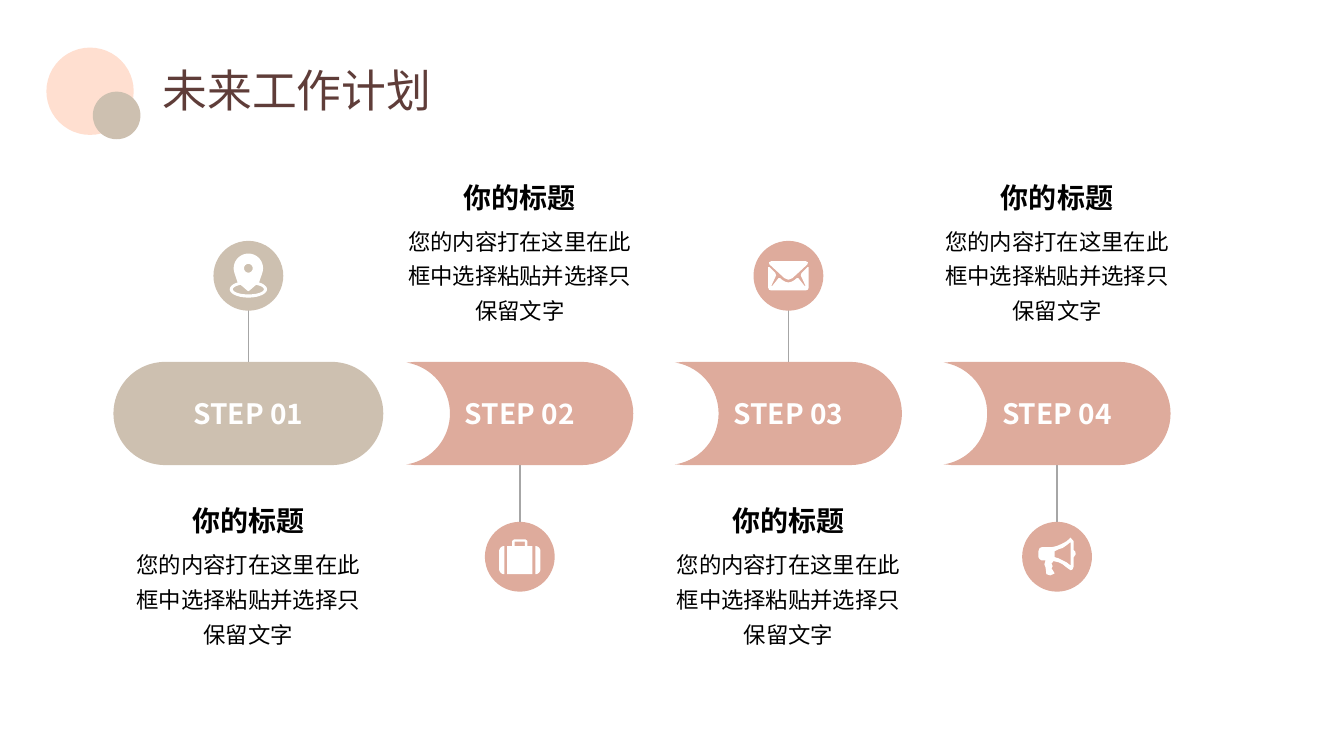
"""Build the four-step future work plan slide."""
from dataclasses import dataclass
from math import cos, radians, sin

from lxml.etree import SubElement
from pptx import Presentation
from pptx.dml.color import RGBColor as RGB
from pptx.enum.shapes import MSO_CONNECTOR as CONN, MSO_SHAPE as SHAPE
from pptx.enum.text import MSO_ANCHOR as ANCHOR, MSO_AUTO_SIZE as FIT, PP_ALIGN as ALIGN
from pptx.oxml.ns import qn
from pptx.util import Cm, Pt


@dataclass(frozen=True)
class Theme:
    font: str = "Noto Sans CJK SC"
    peach: RGB = RGB.from_string("FFDFD0")
    sand: RGB = RGB.from_string("CDC0B0")
    rose: RGB = RGB.from_string("DEAB9C")
    brown: RGB = RGB.from_string("5F3D39")
    gray: RGB = RGB.from_string("A6A6A6")
    white: RGB = RGB.from_string("FFFFFF")
    black: RGB = RGB.from_string("000000")
    title: Pt = Pt(32)
    heading: Pt = Pt(20)
    body: Pt = Pt(16)


T = Theme()


def paint(sp, color):
    sp.fill.solid()
    sp.fill.fore_color.rgb = color
    sp.line.fill.background()
    sp.shadow.inherit = False


def arc(cx, cy, rx, ry, start, end, n=32):
    angles = [radians(start + (end - start) * k / n) for k in range(n + 1)]
    return [(cx + rx * cos(a), cy + ry * sin(a)) for a in angles]


pin = [[
    arc(0, -0.19, 0.37, 0.37, 160, 380) + arc(0, 0.34, 0.47, 0.21, -55, 235),
    arc(0, -0.19, 0.11, 0.11, 0, 360),
    arc(0, 0.34, 0.39, 0.13, -60, 240) + [(-0.03, 0.37), (0, 0.39), (0.03, 0.37)],
]]
suitcase = [
    [arc(-0.39, -0.14, 0.13, 0.13, 270, 180) + arc(-0.39, 0.31, 0.13, 0.13, 180, 90)],
    [
        [(-0.32, -0.27), (-0.19, -0.27), (-0.19, -0.4), (-0.14, -0.44), (0.14, -0.44),
         (0.19, -0.4), (0.19, -0.27), (0.32, -0.27), (0.32, 0.44), (-0.32, 0.44)],
        [(-0.13, -0.38), (0.13, -0.38), (0.13, -0.27), (-0.13, -0.27)],
    ],
    [arc(0.39, -0.14, 0.13, 0.13, -90, 0) + arc(0.39, 0.31, 0.13, 0.13, 0, 90)],
]
flap = [(-0.1, 0.06), (-0.48, -0.29), (-0.49, -0.34), (-0.43, -0.37)]
pocket = [(-0.43, 0.37), (-0.49, 0.35), (-0.51, 0.3), (-0.51, -0.22), (-0.48, -0.22),
          (-0.33, -0.07), (-0.31, -0.01), (-0.43, 0.25), (-0.41, 0.26), (-0.25, 0.06),
          (-0.21, 0.06), (-0.15, 0.11), (-0.08, 0.15)]
envelope = [[[(0, 0.1)] + flap + [(-x, y) for x, y in reversed(flap)],
             pocket + [(0, 0.17)] + [(-x, y) for x, y in reversed(pocket)]]]
megaphone = [[
    [(0.47, -0.06), (0.42, 0.01), (0.42, 0.24), (0.39, 0.32), (0.34, 0.34), (0.24, 0.27),
     (0.14, 0.19), (0.04, 0.14), (-0.09, 0.11), (-0.14, 0.17), (-0.11, 0.24),
     (-0.14, 0.29), (-0.09, 0.37), (-0.06, 0.42), (-0.17, 0.47), (-0.27, 0.44),
     (-0.29, 0.27), (-0.32, 0.19), (-0.29, 0.09), (-0.39, 0.09), (-0.44, 0.06),
     (-0.47, 0.01), (-0.47, -0.14), (-0.44, -0.22), (-0.39, -0.24), (-0.14, -0.24),
     (-0.01, -0.27), (0.11, -0.32), (0.24, -0.39), (0.34, -0.48), (0.42, -0.39),
     (0.42, -0.17), (0.46, -0.13)],
    [(0.34, -0.37), (0.24, -0.29), (0.14, -0.22), (0.04, -0.19), (-0.06, -0.14),
     (-0.06, 0.01), (0.04, 0.04), (0.14, 0.09), (0.24, 0.14), (0.34, 0.22)],
]]
crescent = [arc(1.56, 0, 1.3, 1.3, -90, 90) + [(-2.65, 1.3), (-2.86, 1.28)]
            + arc(-3.06, 0, 1.3, 1.3, 79, -79) + [(-2.86, -1.28), (-2.65, -1.3)]]

prs = Presentation()
prs.slide_width, prs.slide_height = Cm(33.87), Cm(19.05)
s = prs.slides.add_slide(prs.slide_layouts[5])

for x, y, d, color in ((1.17, 1.2, 2.2, T.peach), (2.34, 2.31, 1.2, T.sand)):
    paint(s.shapes.add_shape(SHAPE.OVAL, Cm(x), Cm(y), Cm(d), Cm(d)), color)

title = s.shapes.title
title.left, title.top, title.width, title.height = Cm(3.84), Cm(1.37), Cm(29.21), Cm(1.93)
tf = title.text_frame
tf.text = "未来工作计划"
tf.vertical_anchor, tf.auto_size = ANCHOR.MIDDLE, FIT.NONE
p = tf.paragraphs[0]
p.alignment, p.line_spacing = ALIGN.LEFT, 0.9
p.font.name, p.font.size, p.font.color.rgb = T.font, T.title, T.brown

band_y = 10.42
badge = 1.76
steps = ((6.26, pin, T.sand), (13.1, suitcase, T.rose),
         (19.87, envelope, T.rose), (26.64, megaphone, T.rose))
for i, (cx, icon, color) in enumerate(steps):
    icon_above = i % 2 == 0
    icon_y, line_y, text_y = (6.95, 9.45, 12.14) if icon_above else (14.03, 11.5, 3.99)
    step = s.shapes.add_group_shape().shapes

    line = step.add_connector(CONN.STRAIGHT, Cm(cx), Cm(icon_y), Cm(cx), Cm(line_y))
    line.line.color.rgb, line.line.width = T.gray, Pt(1)
    SubElement(line._element.spPr, qn("a:effectLst"))
    paint(step.add_shape(SHAPE.OVAL, Cm(cx - badge / 2), Cm(icon_y - badge / 2),
                         Cm(badge), Cm(badge)), color)

    outlines = [(part, icon_y, T.white) for part in icon]
    if i == 0:
        band = step.add_shape(SHAPE.ROUNDED_RECTANGLE, Cm(cx - 3.4), Cm(band_y - 1.3),
                              Cm(6.8), Cm(2.6))
        band.adjustments[0] = 0.5
        paint(band, color)
    else:
        outlines.append((crescent, band_y, color))
    for contours, cy, fill in outlines:
        rings = [[(x * 1000, y * 1000) for x, y in ring] for ring in contours]
        fb = step.build_freeform(*rings[0][0], scale=Cm(0.001))
        fb.add_line_segments(rings[0][1:], close=True)
        for ring in rings[1:]:
            fb.move_to(*ring[0])
            fb.add_line_segments(ring[1:], close=True)
        paint(fb.convert_to_shape(Cm(cx), Cm(cy)), fill)

    for text, y, w, h, size, ink, bold, spacing in (
        (f"STEP {i + 1:02}", 9.86, 3.86, 1.12, T.heading, T.white, True, 1.0),
        ("你的标题", text_y, 4.65, 1.4, T.heading, T.black, True, 1.5),
        ("您的内容打在这里在此框中选择粘贴并选择只保留文字",
         text_y + 1.42, 6.68, 2.84, T.body, T.black, False, 1.3),
    ):
        tf = step.add_textbox(Cm(cx - w / 2), Cm(y), Cm(w), Cm(h)).text_frame
        tf.word_wrap = True
        tf.text = text
        p = tf.paragraphs[0]
        p.alignment, p.line_spacing = ALIGN.CENTER, spacing
        p.font.name, p.font.size, p.font.bold = T.font, size, bold
        p.font.color.rgb = ink

for props in s.element.iter(qn("a:defRPr")):
    SubElement(props, qn("a:ea"), typeface=T.font)

prs.save("out.pptx")
